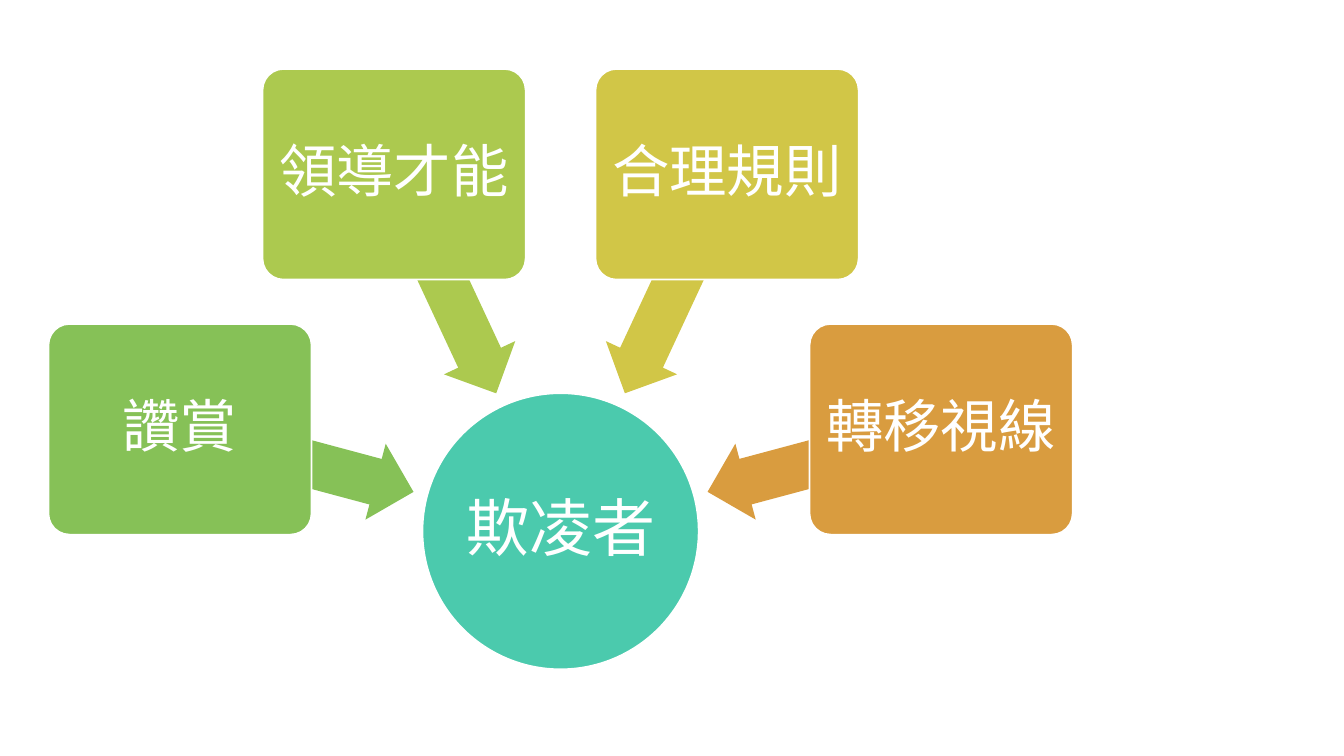
import math
from dataclasses import dataclass

import lxml.etree
import pptx
import pptx.dml.color
import pptx.enum.shapes
import pptx.enum.text
import pptx.oxml.ns
import pptx.presentation
import pptx.shapes.autoshape
import pptx.slide
import pptx.util

SHAPES = pptx.enum.shapes.MSO_SHAPE
SLIDE_WIDTH = pptx.util.Inches(13.33)
SLIDE_HEIGHT = pptx.util.Inches(7.5)
CELL = SLIDE_HEIGHT / 100  # square grid: 100 rows fill the slide's height


@dataclass(frozen=True)
class Theme:
    font: str = "Noto Sans CJK SC"
    white: str = "FFFFFF"
    teal: str = "4BCAAD"
    green: str = "86C157"
    lime: str = "ACC94F"
    yellow: str = "D1C647"
    orange: str = "D99C3F"
    hub_size: float = 45
    tactic_size: float = 41
    outline: float = 1.25
    line_spacing: float = 0.9


@dataclass(frozen=True)
class Block:
    """A preset shape; centre and size are in grid cells."""
    kind: pptx.enum.shapes.MSO_SHAPE
    column: float
    row: float
    width: float
    height: float
    color: str
    rotation: float = 0
    adjustments: tuple[float, ...] = ()


@dataclass(frozen=True)
class Tactic:
    label: str
    color: str


THEME = Theme()
HUB_COLUMN, HUB_ROW, HUB_DIAMETER = 74.13, 70.27, 36.53
BOX_WIDTH, BOX_HEIGHT, BOX_RADIUS = 34.8, 27.87, 52.1
ARROW_LENGTH, ARROW_HEIGHT, ARROW_RADIUS = 32, 10.4, 36.13
HUB_INSET, BOX_INSET = 0.4, 1.2
FIRST_ANGLE, ANGLE_STEP = 195, 50

TACTICS = (
    Tactic("讚賞", THEME.green),
    Tactic("領導才能", THEME.lime),
    Tactic("合理規則", THEME.yellow),
    Tactic("轉移視線", THEME.orange),
)


def cells(count: float) -> int:
    return round(count * CELL)


def around_hub(angle: float, radius: float) -> tuple[float, float]:
    """Return the grid point at a clockwise angle from the hub's right."""
    turn = math.radians(angle)
    return HUB_COLUMN + radius * math.cos(turn), HUB_ROW + radius * math.sin(turn)


def apply_format(target: object, values: dict[str, object]) -> None:
    for name, value in values.items():
        setattr(target, name, value)


def add_block(slide: pptx.slide.Slide, block: Block) -> pptx.shapes.autoshape.Shape:
    shape = slide.shapes.add_shape(
        block.kind,
        cells(block.column - block.width / 2),
        cells(block.row - block.height / 2),
        cells(block.width),
        cells(block.height),
    )
    shape.shadow.inherit = False
    shape.rotation = block.rotation
    shape.fill.solid()
    shape.fill.fore_color.rgb = pptx.dml.color.RGBColor.from_string(block.color)
    shape.line.fill.background()
    for index, value in enumerate(block.adjustments):
        shape.adjustments[index] = value
    return shape


def add_outline(shape: pptx.shapes.autoshape.Shape) -> None:
    shape.line.color.rgb = pptx.dml.color.RGBColor.from_string(THEME.white)
    shape.line.width = pptx.util.Pt(THEME.outline)


def add_label(shape: pptx.shapes.autoshape.Shape, text: str, size: float, inset: float) -> None:
    frame = shape.text_frame
    apply_format(frame, {
        "word_wrap": True,
        "vertical_anchor": pptx.enum.text.MSO_ANCHOR.MIDDLE,
        "margin_left": cells(inset),
        "margin_right": cells(inset),
        "margin_top": cells(inset),
        "margin_bottom": cells(inset),
    })
    paragraph = frame.paragraphs[0]
    apply_format(paragraph, {
        "alignment": pptx.enum.text.PP_ALIGN.CENTER,
        "line_spacing": THEME.line_spacing,
    })
    run = paragraph.add_run()
    run.text = text
    apply_format(run.font, {"size": pptx.util.Pt(size), "name": THEME.font})
    run.font.color.rgb = pptx.dml.color.RGBColor.from_string(THEME.white)
    east_asian = lxml.etree.SubElement(
        run._r.get_or_add_rPr(), pptx.oxml.ns.qn("a:ea"))
    east_asian.set("typeface", THEME.font)


def add_hub(slide: pptx.slide.Slide) -> None:
    hub = add_block(slide, Block(
        SHAPES.OVAL, HUB_COLUMN, HUB_ROW, HUB_DIAMETER, HUB_DIAMETER, THEME.teal))
    add_outline(hub)
    add_label(hub, "欺凌者", THEME.hub_size, HUB_INSET)


def add_tactic(slide: pptx.slide.Slide, tactic: Tactic, angle: float) -> None:
    """Draw a box on the arc around the hub, with its arrow pointing inward."""
    add_block(slide, Block(
        SHAPES.LEFT_ARROW, *around_hub(angle, ARROW_RADIUS),
        ARROW_LENGTH, ARROW_HEIGHT, tactic.color, angle, (0.6, 0.5)))
    box = add_block(slide, Block(
        SHAPES.ROUNDED_RECTANGLE, *around_hub(angle, BOX_RADIUS),
        BOX_WIDTH, BOX_HEIGHT, tactic.color, adjustments=(0.1,)))
    add_outline(box)
    add_label(box, tactic.label, THEME.tactic_size, BOX_INSET)


def main() -> None:
    presentation = pptx.Presentation()
    apply_format(presentation, {"slide_width": SLIDE_WIDTH, "slide_height": SLIDE_HEIGHT})
    slide = presentation.slides.add_slide(presentation.slide_layouts[6])
    add_hub(slide)
    for index, tactic in enumerate(TACTICS):
        add_tactic(slide, tactic, FIRST_ANGLE + index * ANGLE_STEP)
    presentation.save("out.pptx")


if __name__ == "__main__":
    main()
